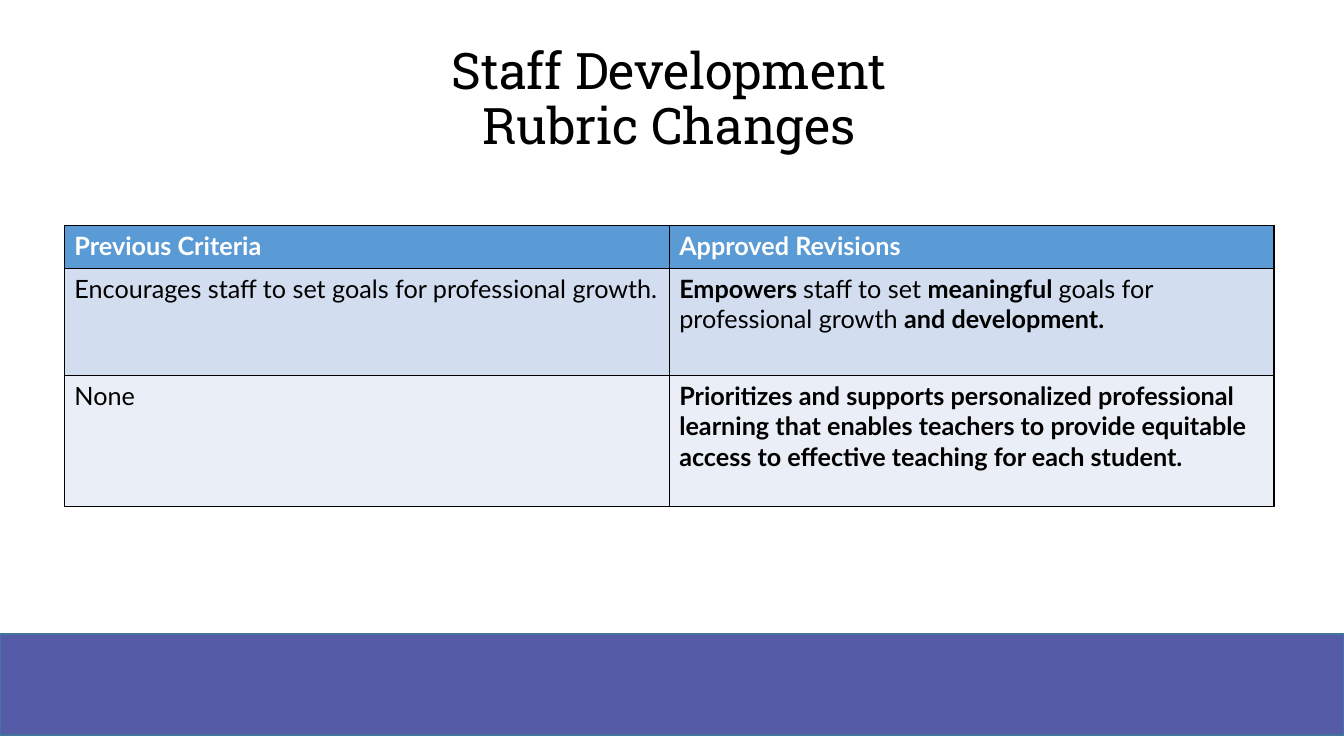
from lxml import etree
from pptx import Presentation
from pptx.dml.color import RGBColor
from pptx.enum import shapes, text
from pptx.oxml import ns
from pptx.util import Pt

# Content: each cell is a list of (text, bold) runs
TITLE = "Staff Development\vRubric Changes"
ROWS = [
    [[("Previous Criteria", True)], [("Approved Revisions", True)]],
    [[("Encourages staff to set goals for professional growth.", False)],
     [("Empowers ", True), ("staff to set ", False), ("meaningful ", True),
      ("goals for professional growth ", False), ("and development.", True)]],
    [[("None", False)],
     [("Prioritizes and supports personalized professional learning that "
       "enables teachers to provide equitable access to effective teaching "
       "for each student.", True)]],
]
# Height, fill and font colour of each row
STYLES = [(30.8, "5B9BD5", "FFFFFF"), (76.4, "D2DEEF", "000000"),
          (93.6, "EAEFF7", "000000")]
WIDE, HIGH = 960, 540
LEFT, SPAN = 46, 864


def color(code):
    return RGBColor.from_string(code)


def style(para, face, size, code):
    para.font.name = face
    para.font.size = Pt(size)
    para.font.color.rgb = color(code)


def border(cell):
    props = cell._tc.get_or_add_tcPr()
    for i, side in enumerate(("lnL", "lnR", "lnT", "lnB")):
        line = etree.Element(ns.qn("a:" + side), w=str(Pt(1)))
        fill = etree.SubElement(line, ns.qn("a:solidFill"))
        etree.SubElement(fill, ns.qn("a:srgbClr"), val="000000")
        props.insert(i, line)


deck = Presentation()
deck.slide_width, deck.slide_height = Pt(WIDE), Pt(HIGH)
slide = deck.slides.add_slide(deck.slide_layouts[6])

# Bottom band
band = slide.shapes.add_shape(shapes.MSO_SHAPE.RECTANGLE,
                              0, Pt(453), Pt(WIDE), Pt(72))
band.shadow.inherit = False
band.fill.solid()
band.fill.fore_color.rgb = color("565BA7")
band.line.color.rgb = color("43739E")
band.line.width = Pt(1)

# Title
frame = slide.shapes.add_textbox(Pt(LEFT), Pt(28.8), Pt(SPAN), Pt(86.4)).text_frame
frame.word_wrap = True
frame.vertical_anchor = text.MSO_ANCHOR.MIDDLE
head = frame.paragraphs[0]
head.text = TITLE
head.alignment = text.PP_ALIGN.CENTER
head.line_spacing = 0.9
style(head, "Roboto Slab", 36, "000000")

# Table
total = sum(high for high, _, _ in STYLES)
table = slide.shapes.add_table(len(ROWS), len(ROWS[0]), Pt(LEFT), Pt(161.2),
                               Pt(SPAN), Pt(total)).table
for r, (row, (high, fill, ink)) in enumerate(zip(ROWS, STYLES)):
    table.rows[r].height = Pt(high)
    for c, runs in enumerate(row):
        cell = table.cell(r, c)
        cell.fill.solid()
        cell.fill.fore_color.rgb = color(fill)
        border(cell)
        para = cell.text_frame.paragraphs[0]
        style(para, "Lato", 18, ink)
        for words, bold in runs:
            run = para.add_run()
            run.text = words
            run.font.bold = bold

deck.save("out.pptx")
